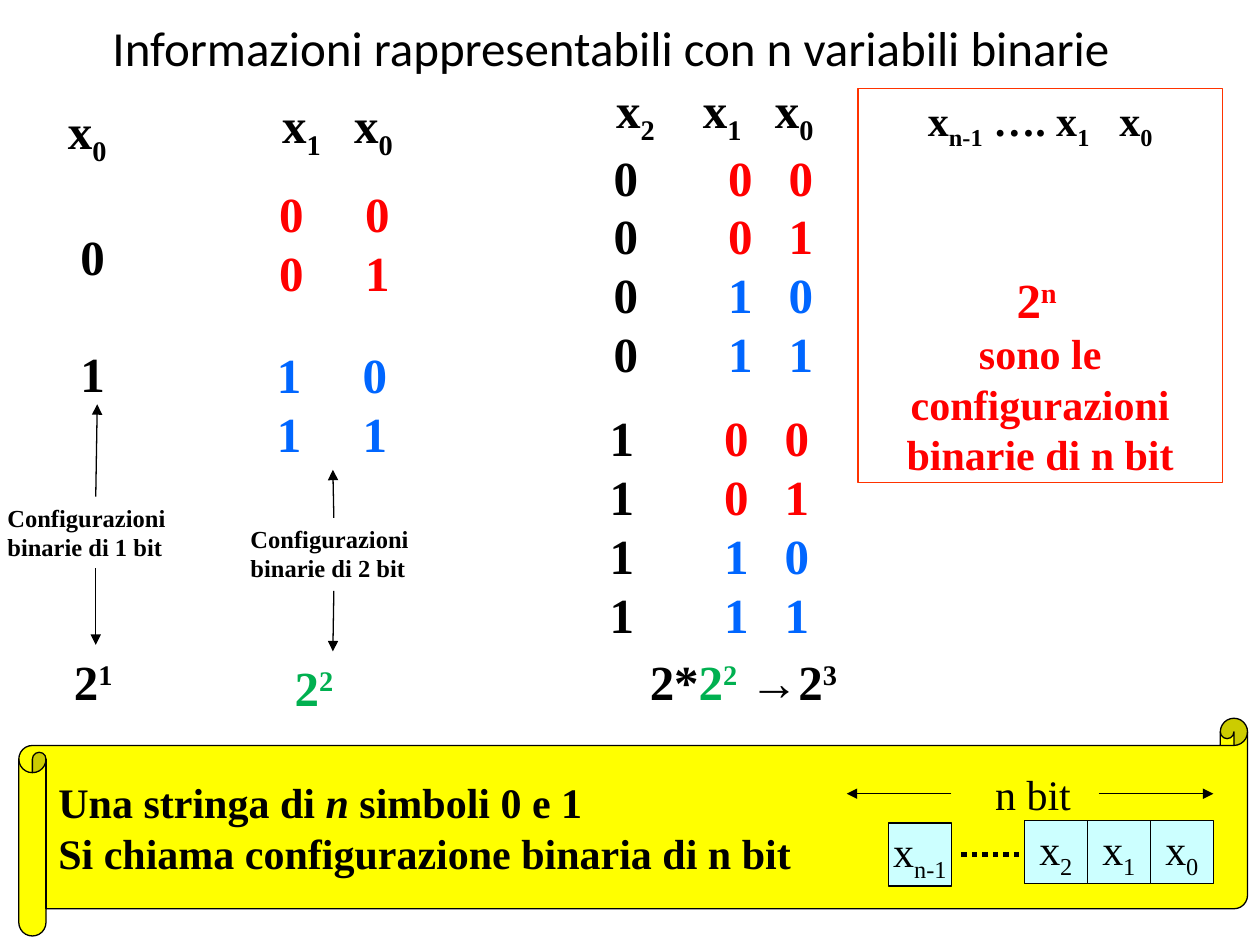
from dataclasses import dataclass

from lxml import etree
from pptx import Presentation
from pptx.dml.color import RGBColor
from pptx.enum.dml import MSO_LINE
from pptx.enum.shapes import MSO_CONNECTOR, MSO_SHAPE
from pptx.enum.text import MSO_ANCHOR, PP_ALIGN
from pptx.oxml.ns import qn
from pptx.util import Cm, Pt

RECT, SCROLL = MSO_SHAPE.RECTANGLE, MSO_SHAPE.HORIZONTAL_SCROLL
STRAIGHT, DOTTED = MSO_CONNECTOR.STRAIGHT, MSO_LINE.ROUND_DOT
LEFT, CENTER = PP_ALIGN.LEFT, PP_ALIGN.CENTER
TOP, MIDDLE = MSO_ANCHOR.TOP, MSO_ANCHOR.MIDDLE
COLORS = {"black": "000000", "red": "FF0000", "blue": "0066FF", "green": "00B050",
          "orange": "FF3300", "yellow": "FFFF00", "cyan": "CCFFFF"}
SUB, SUP = -25000, 30000
CELL = 1.27


@dataclass(frozen=True)
class Run:
    text: str
    base: int = 0
    color: str = "black"
    size: int = 28
    bold: bool = True
    italic: bool = False
    spacing: int = 0


@dataclass(frozen=True)
class Para:
    runs: list[Run]
    align: PP_ALIGN = LEFT
    before: float = 0
    indent: float = 0
    tabs: tuple[float, ...] = ()


@dataclass(frozen=True)
class Box:
    left: float
    top: float
    width: float
    height: float
    paras: list[Para]


@dataclass(frozen=True)
class Line:
    x1: float
    y1: float
    x2: float
    y2: float


def rgb(name: str) -> RGBColor:
    return RGBColor.from_string(COLORS[name])


def var(index: str, lead: str = "", **style) -> list[Run]:
    return [Run(lead + "x", **style), Run(index, SUB, **style)]


def power(exponent: str, lead: str = "", color: str = "black") -> list[Run]:
    return [Run(lead + "2", color=color), Run(exponent, SUP, color)]


def bit_rows(values: range, tab: float) -> list[Para]:
    return [Para([Run(f"{v >> 1}\t{v & 1}", color="blue" if v >> 1 else "red")], tabs=(tab,))
            for v in values]


def write(tf, paras: list[Para], anchor: MSO_ANCHOR = TOP, wrap: bool = True) -> None:
    tf.word_wrap = wrap
    tf.vertical_anchor = anchor
    for i, para in enumerate(paras):
        p = tf.add_paragraph() if i else tf.paragraphs[0]
        p.alignment = para.align
        p.space_before = Pt(para.before)
        ppr = p._p.get_or_add_pPr()
        if para.indent:
            ppr.set("marL", str(Cm(para.indent)))
        if para.tabs:
            tabs = etree.SubElement(ppr, qn("a:tabLst"))
            for pos in para.tabs:
                etree.SubElement(tabs, qn("a:tab"), pos=str(Cm(pos)), algn="l")
        for run in para.runs:
            r = p.add_run()
            r.text = run.text
            font = {"name": "Times New Roman", "size": Pt(run.size),
                    "bold": run.bold, "italic": run.italic}
            for name, value in font.items():
                setattr(r.font, name, value)
            r.font.color.rgb = rgb(run.color)
            for name, value in {"baseline": run.base, "spc": run.spacing}.items():
                if value:
                    r.font._element.set(name, str(value))


def add_text(s, box: Box) -> None:
    tb = s.shapes.add_textbox(Cm(box.left), Cm(box.top), Cm(box.width), Cm(box.height))
    write(tb.text_frame, box.paras)


def add_panel(s, kind: MSO_SHAPE, box: Box, line: str = "black", fill: str | None = None,
              anchor: MSO_ANCHOR = MIDDLE, wrap: bool = True) -> None:
    sp = s.shapes.add_shape(kind, Cm(box.left), Cm(box.top), Cm(box.width), Cm(box.height))
    sp.shadow.inherit = False
    if fill:
        sp.fill.solid()
        sp.fill.fore_color.rgb = rgb(fill)
    else:
        sp.fill.background()
    sp.line.color.rgb = rgb(line)
    sp.line.width = Pt(0.75)
    write(sp.text_frame, box.paras, anchor, wrap)


def add_line(s, line: Line, dotted: bool = False) -> None:
    c = s.shapes.add_connector(STRAIGHT, Cm(line.x1), Cm(line.y1), Cm(line.x2), Cm(line.y2))
    c.line.color.rgb = rgb("black")
    c.line.width = Pt(3 if dotted else 0.75)
    if dotted:
        c.line.dash_style = DOTTED
    else:
        etree.SubElement(c.line._get_or_add_ln(), qn("a:tailEnd"), type="triangle")
    etree.SubElement(c._element.spPr, qn("a:effectLst"))


def add_title(s) -> None:
    title = s.shapes.title
    place = {"left": Cm(1.52), "top": Cm(-0.18), "width": Cm(21.59), "height": Cm(2.26)}
    for name, value in place.items():
        setattr(title, name, value)
    tf = title.text_frame
    tf.vertical_anchor = MIDDLE
    p = tf.paragraphs[0]
    p.alignment = CENTER
    r = p.add_run()
    r.text = "Informazioni rappresentabili con n variabili binarie"
    for name, value in {"name": "Calibri", "size": Pt(28)}.items():
        setattr(r.font, name, value)
    r.font.color.rgb = rgb("black")


def add_tables(s) -> None:
    boxes = [
        Box(1.12, 1.9, 1.65, 6.25, [Para(var("0"))] + [
            Para([Run(bit)], before=33.6, indent=0.25) for bit in "01"]),
        Box(5.44, 1.78, 3.23, 1.45, [Para(var("1") + var("0", "\t"), tabs=(1.45,))]),
        Box(5.38, 3.58, 2.77, 2.64, bit_rows(range(2), 1.73)),
        Box(5.33, 6.83, 2.77, 2.64, bit_rows(range(2, 4), 1.73)),
        Box(12.17, 1.47, 5.18, 2.64,
            [Para(var("2") + var("1", "\t") + var("0", "\t"), tabs=(1.75, 3.2))]),
        Box(1.24, 13, 1.35, 1.45, [Para(power("1"))]),
        Box(5.69, 13.13, 2.06, 1.45, [Para(power("2", color="green"))]),
        Box(12.85, 13, 2.5, 1.45, [Para([Run("2*")] + power("2", color="green"))]),
        Box(14.86, 13, 2.34, 1.45, [Para(power("3", "→"))]),
    ]
    for bit, left, pair_left, top in (("0", 12.12, 14.43, 2.84), ("1", 12.04, 14.35, 8.1)):
        boxes.append(Box(left, top, 1.47, 5.05, [Para([Run(bit)])] * 4))
        boxes.append(Box(pair_left, top, 2.26, 5.05, bit_rows(range(4), 1.22)))
    for n, left, top, width in ((1, -0.1, 10.01, 4.04), (2, 4.8, 10.44, 3.84)):
        label = Run(f"Configurazioni binarie di {n} bit", size=14)
        boxes.append(Box(left, top, width, 1.45, [Para([label])]))
    for box in boxes:
        add_text(s, box)
    for line in (Line(1.93, 10.01, 1.96, 8.15), Line(1.93, 11.46, 1.93, 13),
                 Line(6.73, 10.44, 6.71, 9.47), Line(6.73, 11.91, 6.71, 13.13)):
        add_line(s, line)


def add_general_case(s) -> None:
    header = (var("n-1", size=24) + var("1", " …. ", size=24)
              + [Run(" ", size=24, spacing=1100)] + var("0", size=24))
    text = "sono le configurazioni binarie di n bit"
    add_panel(s, RECT, Box(17.3, 1.78, 7.34, 7.95, [
        Para(header, CENTER),
        Para(power("n ", color="red"), CENTER, before=67),
        Para([Run(text, color="red", size=24)], CENTER),
    ]), line="orange", anchor=TOP)


def add_scroll(s) -> None:
    add_panel(s, SCROLL, Box(0.38, 14.48, 24.77, 4.39, [
        Para([Run("Una stringa di ", size=24), Run("n", size=24, italic=True),
              Run(" simboli 0 e 1", size=24)]),
        Para([Run("Si chiama configurazione binaria di n bit", size=24)]),
    ]), fill="yellow")
    cells = [("n-1", 17.91, 16.59)]
    cells += [(str(2 - i), 20.65 + i * CELL, 16.54) for i in range(3)]
    for index, left, top in cells:
        runs = var(index, size=24, bold=False)
        add_panel(s, RECT, Box(left, top, CELL, CELL, [Para(runs, CENTER)]),
                  fill="cyan", wrap=False)
    add_text(s, Box(19.81, 15.37, 2.3, CELL, [Para([Run("n bit", size=24, bold=False)])]))
    add_line(s, Line(19.38, 17.22, 20.65, 17.22), dotted=True)
    for line in (Line(19.18, 16, 17.07, 16), Line(22.15, 16, 24.46, 16)):
        add_line(s, line)


def main() -> None:
    prs = Presentation()
    prs.slide_width, prs.slide_height = Cm(25.4), Cm(19.05)
    s = prs.slides.add_slide(prs.slide_layouts[5])
    add_title(s)
    add_tables(s)
    add_general_case(s)
    add_scroll(s)
    prs.save("out.pptx")


if __name__ == "__main__":
    main()
